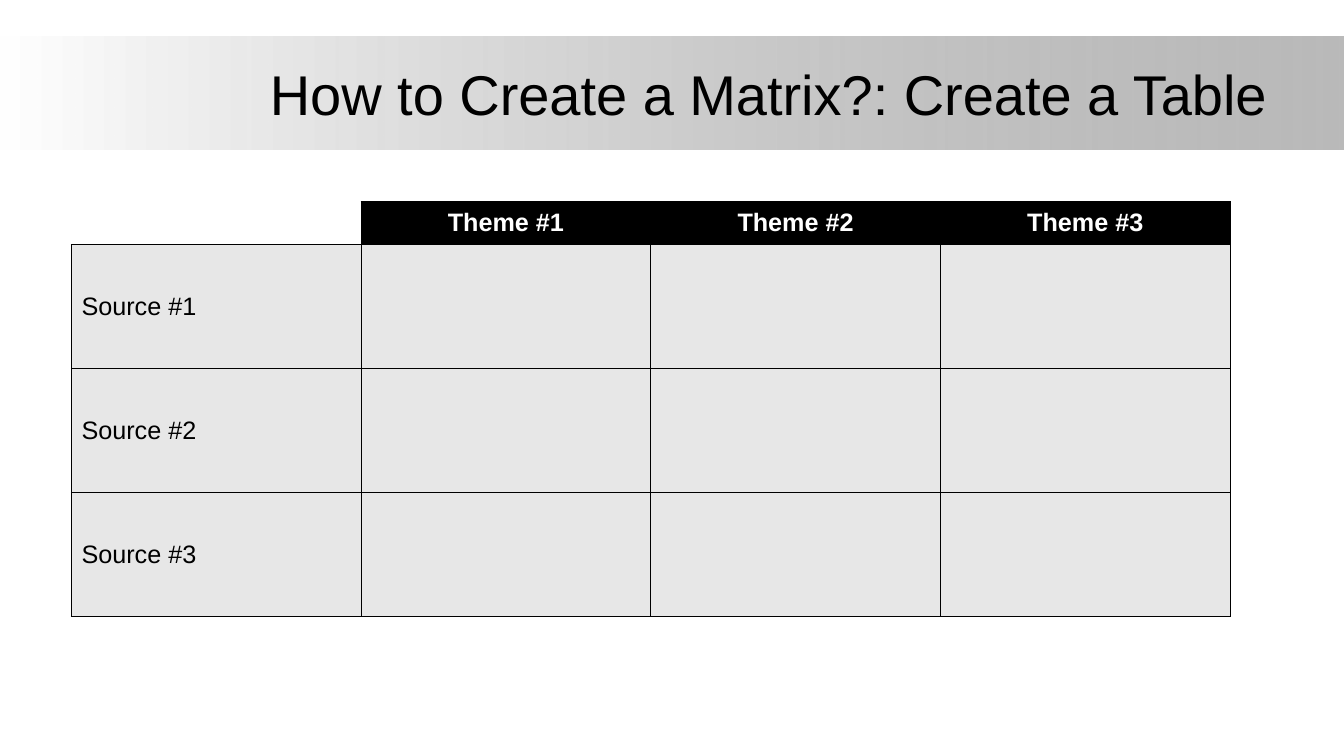
from lxml.etree import SubElement
from pptx import Presentation
from pptx.dml.color import RGBColor
from pptx.enum.shapes import MSO_SHAPE
from pptx.enum.text import MSO_ANCHOR, PP_ALIGN
from pptx.oxml.ns import qn
from pptx.util import Cm, Pt


def color(value):
    return RGBColor.from_string(value)


def add_border(cell, side, value):
    line = SubElement(cell._tc.get_or_add_tcPr(), qn(f"a:ln{side}"), w=str(Pt(1)))
    if value:
        fill = SubElement(line, qn("a:solidFill"))
        SubElement(fill, qn("a:srgbClr"), val=value)
    else:
        SubElement(line, qn("a:noFill"))


presentation = Presentation()
presentation.slide_width = Cm(33.87)
presentation.slide_height = Cm(19.05)
slide = presentation.slides.add_slide(presentation.slide_layouts[5])

band = slide.shapes.add_shape(MSO_SHAPE.RECTANGLE, 0, Cm(0.92), presentation.slide_width, Cm(2.84))
band.shadow.inherit = False
band.line.fill.background()
band.fill.gradient()
band.fill.gradient_angle = 0
for stop, value in zip(band.fill.gradient_stops, ("FFFFFF", "808080")):
    stop.color.rgb = color(value)
end_color = band._element.findall(".//" + qn("a:srgbClr"))[-1]
SubElement(end_color, qn("a:alpha"), val="54000")
slide.shapes._spTree.insert(2, band._element)

title = slide.shapes.title
title.left, title.top, title.width, title.height = Cm(1.7), Cm(0.76), Cm(30.48), Cm(3.18)
title.text_frame.text = "How to Create a Matrix?: Create a Table"
title.text_frame.vertical_anchor = MSO_ANCHOR.MIDDLE
title_paragraph = title.text_frame.paragraphs[0]
title_paragraph.alignment = PP_ALIGN.RIGHT
title_paragraph.font.size = Pt(40)
title_paragraph.font.name = "Arial"
title_paragraph.font.color.rgb = color("000000")

rows = [["", "Theme #1", "Theme #2", "Theme #3"]]
rows += [[f"Source #{number}", "", "", ""] for number in range(1, 4)]
matrix = slide.shapes.add_table(4, 4, Cm(1.8), Cm(5.08), Cm(29.2), Cm(10.45)).table
for column in matrix.columns:
    column.width = Cm(7.3)

for row_index, texts in enumerate(rows):
    header = row_index == 0
    matrix.rows[row_index].height = Cm(1.09 if header else 3.12)
    for column_index, text in enumerate(texts):
        cell = matrix.cell(row_index, column_index)
        corner = header and column_index == 0
        for side in "LRTB":
            add_border(cell, side, None if corner and side in "LT" else "000000")
        if corner:
            cell.fill.background()
        else:
            cell.fill.solid()
            cell.fill.fore_color.rgb = color("000000" if header else "E7E7E7")
        cell.vertical_anchor = MSO_ANCHOR.MIDDLE
        cell.text_frame.text = text
        paragraph = cell.text_frame.paragraphs[0]
        paragraph.alignment = PP_ALIGN.CENTER if header else PP_ALIGN.LEFT
        paragraph.font.size = Pt(18)
        paragraph.font.name = "Arial"
        paragraph.font.bold = header
        paragraph.font.color.rgb = color("FFFFFF" if header else "000000")

presentation.save("out.pptx")
